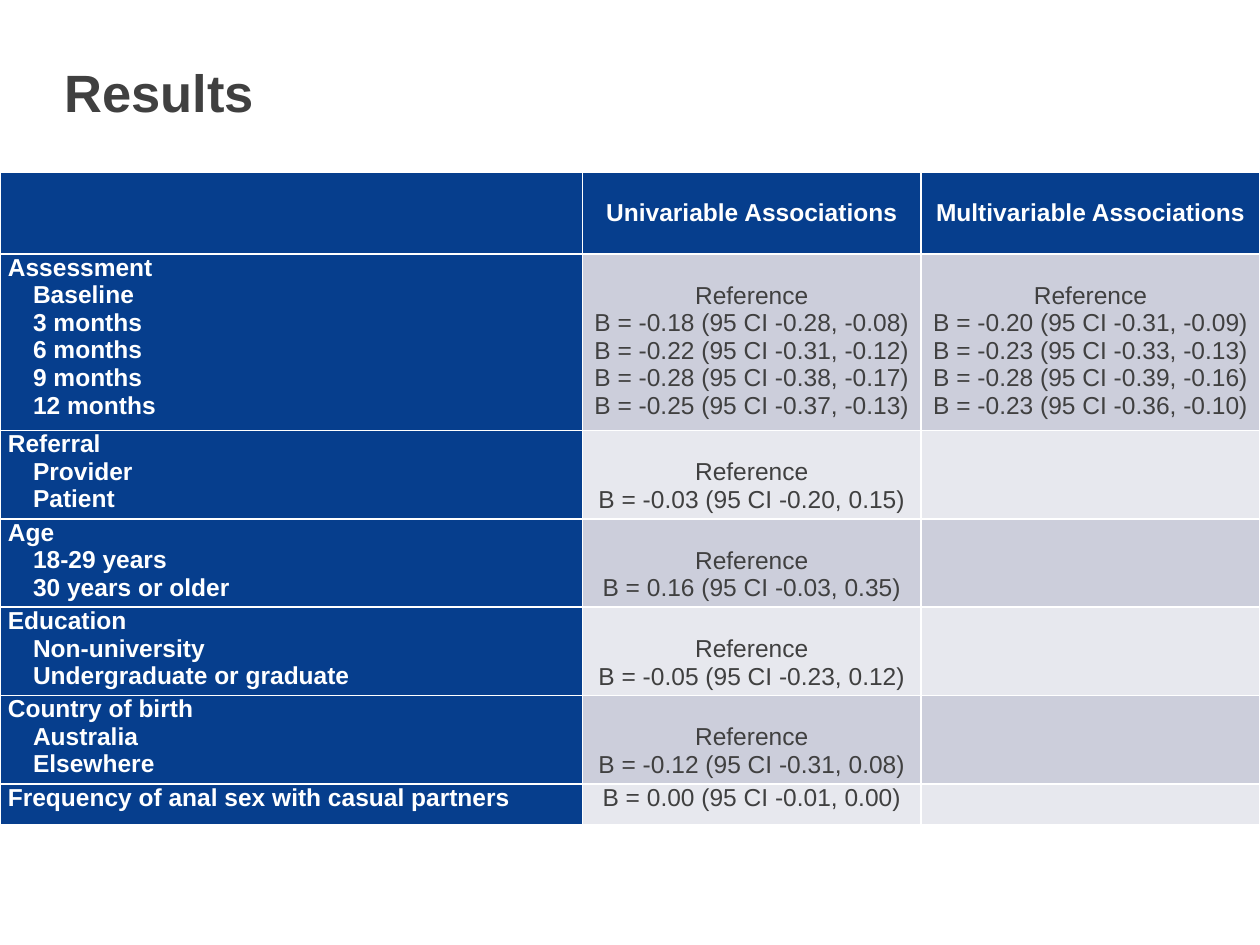
"""Build the Results slide with its table of univariable and multivariable associations."""
from pptx import Presentation
from pptx.dml.color import RGBColor
from pptx.enum.text import MSO_ANCHOR, PP_ALIGN
from pptx.util import Pt

THEME = {
    "font": "Arial",
    "title_size": Pt(30),
    "table_size": Pt(14),
    "ink": RGBColor.from_string("404040"),
    "white": RGBColor.from_string("FFFFFF"),
    "blue": RGBColor.from_string("063E8D"),
    "bands": [RGBColor.from_string("CCCEDB"), RGBColor.from_string("E7E8EE")],
}
CELL_MARGINS = {"margin_left": Pt(4.5), "margin_right": Pt(4.5), "margin_top": 0, "margin_bottom": 0}
LINE_HEIGHT = Pt(16)
LEVEL_INDENT = Pt(14.4)

HEADINGS = ["", "Univariable Associations", "Multivariable Associations"]
GROUPS = [
    ("Assessment", ["Baseline", "3 months", "6 months", "9 months", "12 months"],
     ["Reference", "B = -0.18 (95 CI -0.28, -0.08)", "B = -0.22 (95 CI -0.31, -0.12)",
      "B = -0.28 (95 CI -0.38, -0.17)", "B = -0.25 (95 CI -0.37, -0.13)"],
     ["Reference", "B = -0.20 (95 CI -0.31, -0.09)", "B = -0.23 (95 CI -0.33, -0.13)",
      "B = -0.28 (95 CI -0.39, -0.16)", "B = -0.23 (95 CI -0.36, -0.10)"]),
    ("Referral", ["Provider", "Patient"], ["Reference", "B = -0.03 (95 CI -0.20, 0.15)"], []),
    ("Age", ["18-29 years", "30 years or older"], ["Reference", "B = 0.16 (95 CI -0.03, 0.35)"], []),
    ("Education", ["Non-university", "Undergraduate or graduate"],
     ["Reference", "B = -0.05 (95 CI -0.23, 0.12)"], []),
    ("Country of birth", ["Australia", "Elsewhere"], ["Reference", "B = -0.12 (95 CI -0.31, 0.08)"], []),
    ("Frequency of anal sex with casual partners", [], ["B = 0.00 (95 CI -0.01, 0.00)"], []),
]
COLUMN_WIDTHS = [Pt(332.8), Pt(193.6), Pt(193.6)]
ROW_HEIGHTS = [Pt(47), Pt(94.8)] + [Pt(48.3)] * 4 + [Pt(23.6)]


def write_lines(frame, lines, size, color, bold, align=PP_ALIGN.LEFT):
    for index, line in enumerate(lines):
        paragraph = frame.paragraphs[0] if index == 0 else frame.add_paragraph()
        paragraph.alignment = align
        run = paragraph.add_run()
        run.text = line
        run.font.color.rgb = color
        for attribute, value in {"name": THEME["font"], "size": size, "bold": bold}.items():
            setattr(run.font, attribute, value)


def format_cell(cell, fill, **layout):
    cell.fill.solid()
    cell.fill.fore_color.rgb = fill
    for attribute, value in {**CELL_MARGINS, **layout}.items():
        setattr(cell, attribute, value)


presentation = Presentation()
presentation.slide_width, presentation.slide_height = Pt(720), Pt(540)
slide = presentation.slides.add_slide(presentation.slide_layouts[6])

title = slide.shapes.add_textbox(Pt(36.7), Pt(33.8), Pt(578), Pt(36.7)).text_frame
title_layout = {"margin_left": 0, "margin_right": 0, "margin_top": 0, "margin_bottom": 0,
                "word_wrap": True, "vertical_anchor": MSO_ANCHOR.BOTTOM}
for attribute, value in title_layout.items():
    setattr(title, attribute, value)
write_lines(title, ["Results"], THEME["title_size"], THEME["ink"], True)

associations = slide.shapes.add_table(
    len(ROW_HEIGHTS), len(COLUMN_WIDTHS), 0, Pt(98.2), sum(COLUMN_WIDTHS), sum(ROW_HEIGHTS)).table
for column, width in zip(associations.columns, COLUMN_WIDTHS):
    column.width = width
for row, height in zip(associations.rows, ROW_HEIGHTS):
    row.height = height

for column_index, heading in enumerate(HEADINGS):
    cell = associations.cell(0, column_index)
    format_cell(cell, THEME["blue"], vertical_anchor=MSO_ANCHOR.MIDDLE)
    if heading:
        write_lines(cell.text_frame, [heading], THEME["table_size"], THEME["white"], True, PP_ALIGN.CENTER)

for row_index, (factor, levels, *estimates) in enumerate(GROUPS, start=1):
    factor_cell = associations.cell(row_index, 0)
    format_cell(factor_cell, THEME["blue"])
    write_lines(factor_cell.text_frame, [factor, *levels], THEME["table_size"], THEME["white"], True)
    for level in factor_cell.text_frame.paragraphs[1:]:
        level._p.get_or_add_pPr().set("indent", str(int(LEVEL_INDENT)))
    for column_index, values in enumerate(estimates, start=1):
        cell = associations.cell(row_index, column_index)
        first_line = LINE_HEIGHT if levels and values else 0
        format_cell(cell, THEME["bands"][(row_index - 1) % 2], margin_top=first_line)
        write_lines(cell.text_frame, values, THEME["table_size"], THEME["ink"], False, PP_ALIGN.CENTER)

presentation.save("out.pptx")
